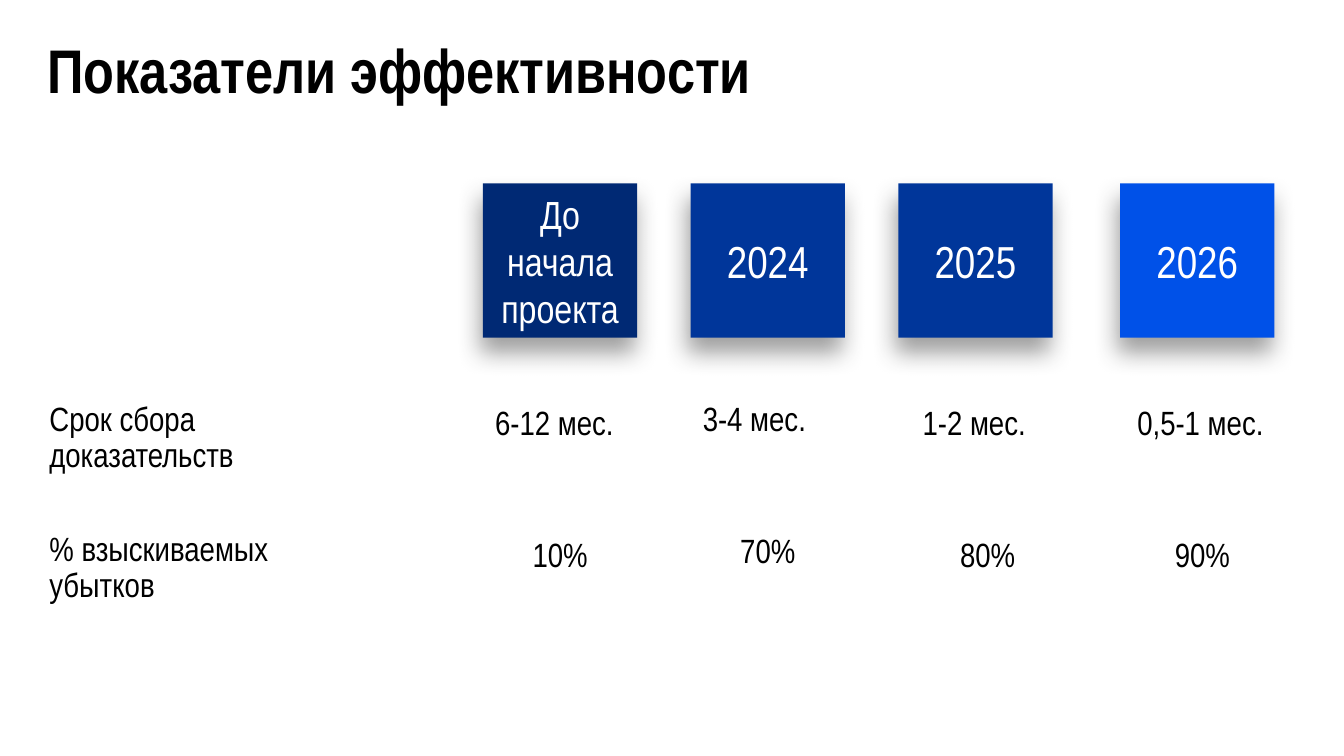
from lxml import etree
from pptx import Presentation, util as u
from pptx.dml.color import RGBColor
from pptx.enum import shapes, text
from pptx.oxml import ns

PX = 9144  # EMU per px, 100 px to the inch
COLORS = {"ink": "000000", "white": "FFFFFF", "shadow": "404040",
          "before": "002974", "middle": "00369A", "target": "0051E8"}


class Deck:
    font = "Arial Narrow"

    def __init__(self, width, height):
        self.prs = Presentation()
        self.prs.slide_width, self.prs.slide_height = width * PX, height * PX
        self.slide = self.prs.slides.add_slide(self.prs.slide_layouts[6])

    def put_words(self, frame, words, size, color, align, bold=False):
        frame.word_wrap = True
        paragraph = frame.paragraphs[0]
        paragraph.text = words
        paragraph.alignment = align
        font = paragraph.font
        font.name, font.size, font.bold = self.font, u.Pt(size), bold
        font.color.rgb = RGBColor.from_string(COLORS[color])
        return paragraph

    def box(self, left, top, width, height):
        area = [side * PX for side in (left, top, width, height)]
        frame = self.slide.shapes.add_textbox(*area).text_frame
        frame.auto_size = text.MSO_AUTO_SIZE.SHAPE_TO_FIT_TEXT
        return frame

    def title(self, words, *area):
        paragraph = self.put_words(self.box(*area), words, 44, "ink",
                                   text.PP_ALIGN.LEFT, bold=True)
        paragraph.line_spacing = 0.9

    def label(self, words, *area, align=text.PP_ALIGN.LEFT):
        frame = self.box(*area)
        frame.margin_left = frame.margin_right = 0
        frame.margin_top = frame.margin_bottom = 0
        paragraph = self.put_words(frame, words, 24, "ink", align)
        paragraph.line_spacing = 0.9
        paragraph.space_before = u.Pt(10)

    def tile(self, words, left, top, side, fill, size):
        tile = self.slide.shapes.add_shape(
            shapes.MSO_SHAPE.RECTANGLE, left * PX, top * PX, side * PX, side * PX)
        tile.fill.solid()
        tile.fill.fore_color.rgb = RGBColor.from_string(COLORS[fill])
        tile.line.fill.background()
        self.shade(tile)
        tile.text_frame.vertical_anchor = text.MSO_ANCHOR.MIDDLE
        self.put_words(tile.text_frame, words, size, "white", text.PP_ALIGN.CENTER)

    def shade(self, tile):
        tile.shadow.inherit = False
        effects = tile._element.spPr.find(ns.qn("a:effectLst"))
        shadow = etree.SubElement(
            effects, ns.qn("a:outerShdw"), blurRad=str(u.Pt(17)),
            dist=str(u.Pt(11)), dir=str(101 * 60000), algn="t", rotWithShape="0")
        color = etree.SubElement(shadow, ns.qn("a:srgbClr"), val=COLORS["shadow"])
        etree.SubElement(color, ns.qn("a:alpha"), val="49000")


# period, tile left, fill, text size, values left, values top, term width, term, share
PERIODS = [
    ("До начала проекта", 479, "before", 28, 491, 403, 129, "6-12 мес.", "10%"),
    ("2024", 685, "middle", 32, 697, 399, 129, "3-4 мес.", "70%"),
    ("2025", 891, "middle", 32, 915, 403, 129, "1-2 мес.", "80%"),
    ("2026", 1111, "target", 32, 1128, 403, 153, "0,5-1 мес.", "90%"),
]
ROW_STEP = 131


def main():
    deck = Deck(1333, 750)
    deck.title("Показатели эффективности", 37, 35, 1150, 77)

    # Indicator names
    deck.label("Срок сбора доказательств", 49, 399, 283, 73)
    deck.label("% взыскиваемых убытков", 49, 528, 244, 73)

    # One column per period: tile, term, share
    for period, tile_left, fill, size, left, top, width, term, share in PERIODS:
        deck.tile(period, tile_left, 182, 153, fill, size)
        deck.label(term, left, top, width, 36)
        deck.label(share, left, top + ROW_STEP, 129, 36, align=text.PP_ALIGN.CENTER)

    deck.prs.save("out.pptx")


if __name__ == "__main__":
    main()
